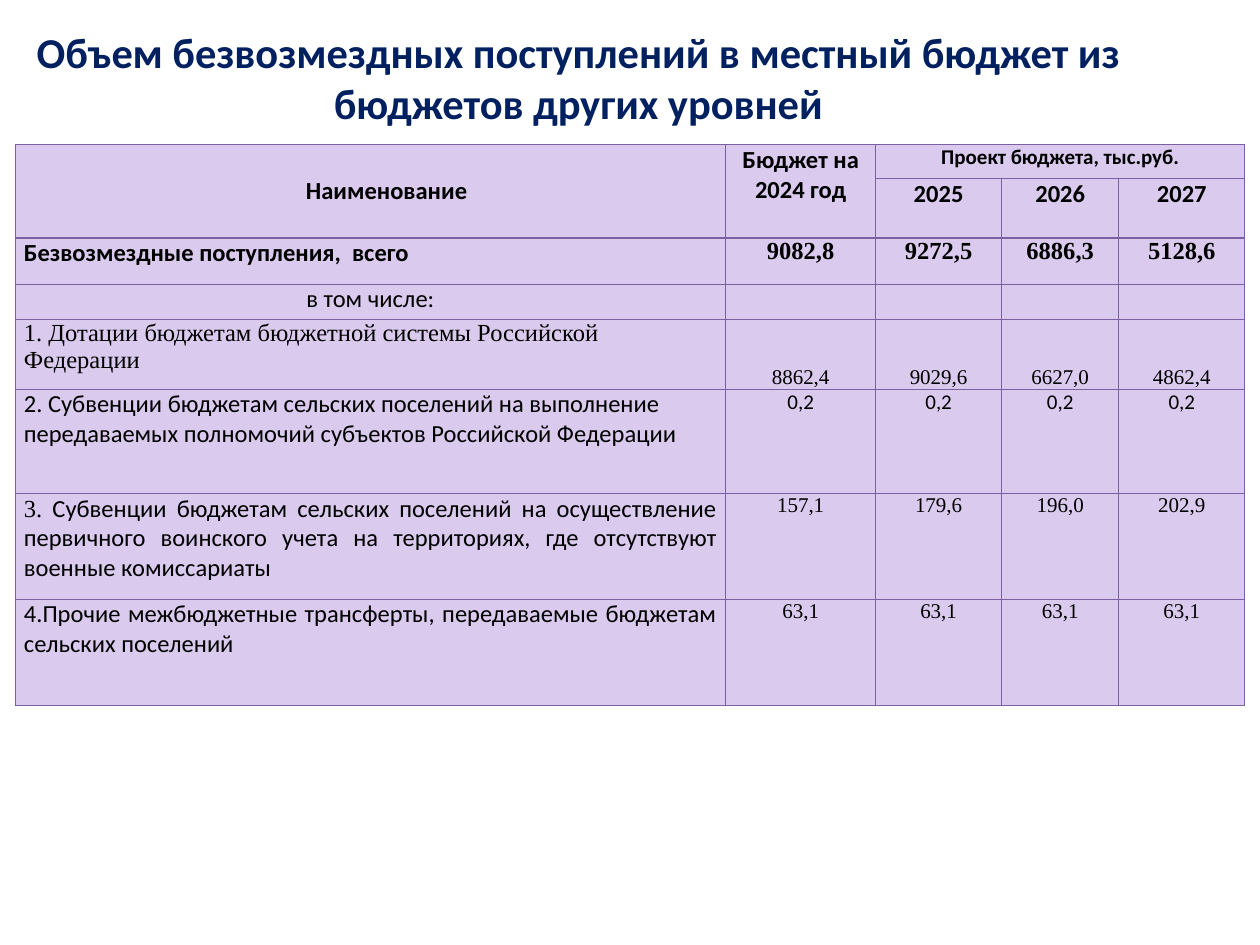
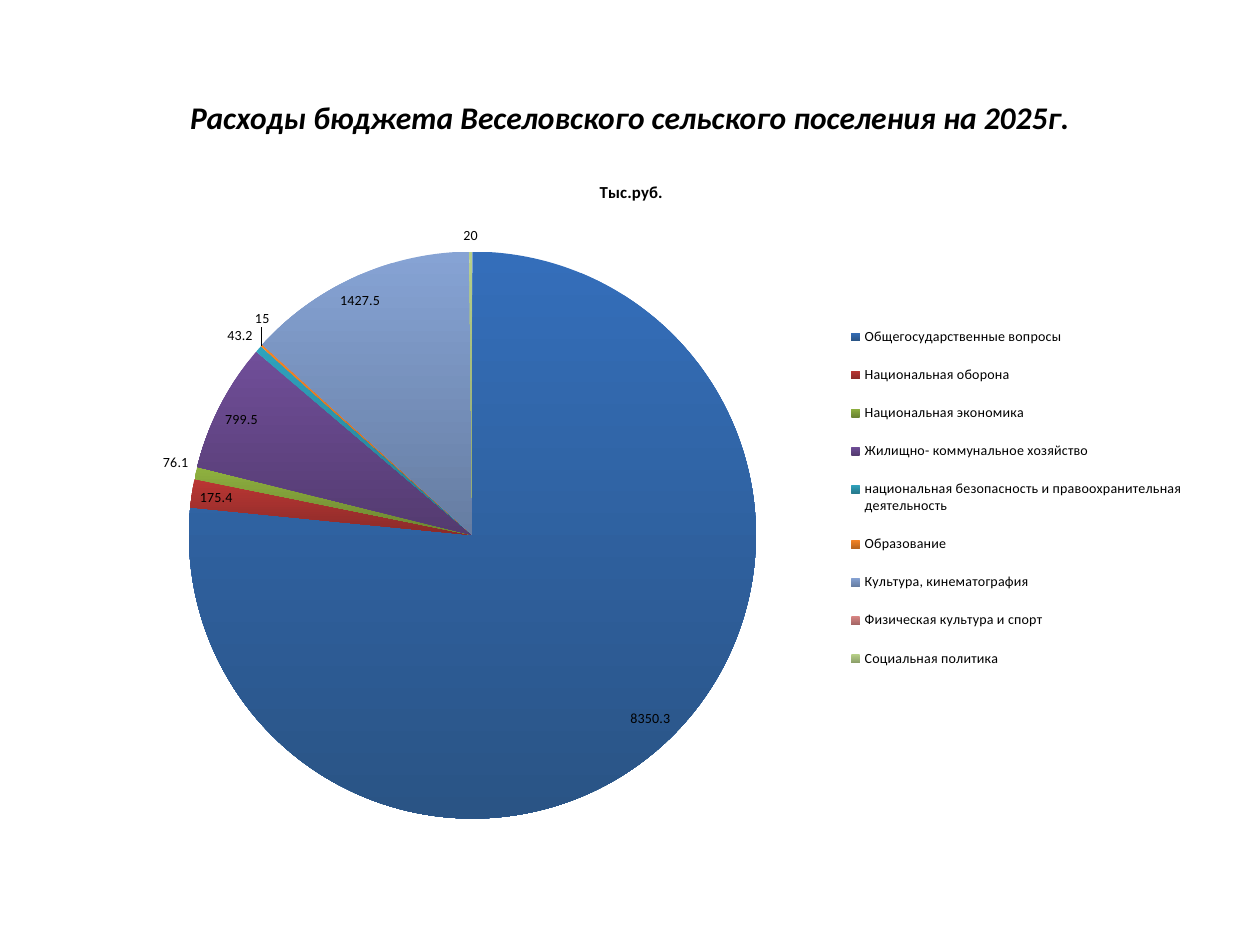
import pptx
import pptx.chart.data
import pptx.dml.color
import pptx.enum.chart
import pptx.enum.text
import pptx.oxml
import pptx.oxml.ns
import pptx.util
from pptx.util import Inches, Pt

COLORS = {"navy": "002060", "black": "000000", "lilac": "DACAED", "border": "7D60A0"}
BODY, SERIF = "Calibri", "Times New Roman"
ALIGN = pptx.enum.text.PP_ALIGN
ANCHOR = pptx.enum.text.MSO_ANCHOR


def set_font(font, size, name=BODY, bold=False, color="black"):
    font.size, font.name, font.bold = Pt(size), name, bold
    font.color.rgb = pptx.dml.color.RGBColor.from_string(COLORS[color])


def add_title(slide, text, left, top, height, size, color, anchor):
    box = slide.shapes.add_textbox(Inches(left), Inches(top), Inches(9), Inches(height))
    frame = box.text_frame
    frame.word_wrap = True
    frame.vertical_anchor = anchor
    frame.margin_top = frame.margin_bottom = 0
    title = frame.paragraphs[0]
    title.text = text
    title.alignment = ALIGN.CENTER
    set_font(title.font, size, bold=True, color=color)
    return title


prs = pptx.Presentation()
prs.slide_width, prs.slide_height = Inches(10), Inches(7.5)
blank = prs.slide_layouts[6]

# Slide 1: transfers from other budgets
transfers = prs.slides.add_slide(blank)
add_title(transfers, "Объем безвозмездных поступлений в местный бюджет из бюджетов других уровней",
          0.09, 0.21, 1.01, 24.3, "navy", ANCHOR.TOP)

col_widths = [5.64, 1.19, 1, 0.93, 1]
row_heights = [0.27, 0.47, 0.37, 0.28, 0.55, 0.83, 0.84, 0.84]
budget = transfers.shapes.add_table(
    len(row_heights), len(col_widths), Inches(0.12), Inches(1.15),
    Inches(sum(col_widths)), Inches(sum(row_heights))).table
for column, width in zip(budget.columns, col_widths):
    column.width = Inches(width)
for row, height in zip(budget.rows, row_heights):
    row.height = Inches(height)

header = (14, BODY, True)
total = (14, SERIF, True)
plain = (14, BODY, False)
amount = (12, SERIF, False)
# Each row: texts, alignment of the name, style of the name, style of the values
budget_rows = [
    (["Наименование ", "Бюджет на 2024 год", "Проект бюджета, тыс.руб.", "", ""],
     ALIGN.CENTER, header, header),
    (["", "", "2025", "2026", "2027"], ALIGN.CENTER, header, header),
    (["Безвозмездные поступления,  всего", "9082,8", "9272,5", "6886,3", "5128,6"],
     ALIGN.LEFT, header, total),
    (["в том числе:", "", "", "", ""], ALIGN.CENTER, plain, amount),
    (["1. Дотации бюджетам бюджетной системы Российской Федерации",
      "8862,4", "9029,6", "6627,0", "4862,4"], ALIGN.LEFT, (14, SERIF, False), amount),
    (["2. Субвенции бюджетам сельских поселений на выполнение передаваемых полномочий "
      "субъектов Российской Федерации", "0,2", "0,2", "0,2", "0,2"],
     ALIGN.LEFT, plain, (12, BODY, False)),
    (["3. Субвенции бюджетам сельских поселений на осуществление первичного воинского учета "
      "на территориях, где отсутствуют военные комиссариаты",
      "157,1", "179,6", "196,0", "202,9"], ALIGN.JUSTIFY, plain, amount),
    (["4.Прочие межбюджетные трансферты, передаваемые бюджетам сельских поселений",
      "63,1", "63,1", "63,1", "63,1"], ALIGN.JUSTIFY, plain, amount),
]
for r, (texts, name_align, name_style, value_style) in enumerate(budget_rows):
    for c, text in enumerate(texts):
        cell = budget.cell(r, c)
        cell.margin_left = cell.margin_right = Inches(0.07)
        cell.margin_top = cell.margin_bottom = 0
        cell.fill.solid()
        cell.fill.fore_color.rgb = pptx.dml.color.RGBColor.from_string(COLORS["lilac"])
        for i, side in enumerate(["lnL", "lnR", "lnT", "lnB"]):
            cell._tc.get_or_add_tcPr().insert(i, pptx.oxml.parse_xml(
                f'<a:{side} {pptx.oxml.ns.nsdecls("a")} w="9525"><a:solidFill>'
                f'<a:srgbClr val="{COLORS["border"]}"/></a:solidFill></a:{side}>'))
        paragraph = cell.text_frame.paragraphs[0]
        paragraph.text = text
        paragraph.alignment = ALIGN.CENTER if c else name_align
        set_font(paragraph.font, *(value_style if c else name_style))

for first, last in [((0, 0), (1, 0)), ((0, 1), (1, 1)), ((0, 2), (0, 4))]:
    budget.cell(*first).merge(budget.cell(*last))
name_header = budget.cell(0, 0)
name_header.vertical_anchor = ANCHOR.MIDDLE
name_header.text_frame.paragraphs[0]._p.get_or_add_pPr().set("indent", str(Inches(0.3)))
budget.cell(0, 2).text_frame.paragraphs[0].font.size = Pt(12)
for c in range(1, 5):
    budget.cell(4, c).vertical_anchor = ANCHOR.BOTTOM

military = budget.cell(6, 0).text_frame.paragraphs[0]
number, wording = military.runs[0].text[:2], military.runs[0].text[2:]
military.runs[0].text = number
military.runs[0].font.name = SERIF
military.add_run().text = wording

# Slide 2: expenses by section
expenses = prs.slides.add_slide(blank)
add_title(expenses, "Расходы бюджета Веселовского сельского поселения на 2025г.",
          0.5, 0.3, 1.25, 18, "black", ANCHOR.MIDDLE).font.italic = True

# Each section: name, amount, gradient from top to bottom
sections = [
    ("Общегосударственные вопросы", 8350.3, "346EBA", "2A5485"),
    ("Национальная оборона", 175.4, "BB3633", "8A2B29"),
    ("Национальная экономика", 76.1, "8FB13F", "6B8432"),
    ("Жилищно- коммунальное хозяйство", 799.5, "704E99", "543B70"),
    ("национальная безопасность и правоохранительная деятельность", 43.2, "2FA3BD", "277A8D"),
    ("Образование", 15, "F58426", "B9651F"),
    ("Культура, кинематография", 1427.5, "86A3D4", "667DA2"),
    ("Физическая культура и спорт", 0, "D98684", "A56766"),
    ("Социальная политика", 20, "B7D088", "8DA06A"),
]
chart_data = pptx.chart.data.CategoryChartData()
chart_data.categories = [section[0] for section in sections]
chart_data.add_series("Тыс.руб.", [section[1] for section in sections])
pie = expenses.shapes.add_chart(
    pptx.enum.chart.XL_CHART_TYPE.PIE,
    Inches(0.51), Inches(1.25), Inches(9), Inches(5.4), chart_data).chart
set_font(pie.font, 8)
pie.has_title = True
pie_title = pie.chart_title.text_frame.paragraphs[0]
pie_title.text = "Тыс.руб."
set_font(pie_title.font, 9.6, bold=True)
pie.has_legend = True
pie.legend.position = pptx.enum.chart.XL_LEGEND_POSITION.RIGHT
pie.legend.include_in_layout = False
set_font(pie.legend.font, 8)

slices = pie.plots[0].series[0]
for i, (_, _, top_color, bottom_color) in enumerate(sections):
    fill = slices.points[i].format.fill
    fill.gradient()
    fill.gradient_angle = 270
    for stop, color in zip(fill.gradient_stops, (top_color, bottom_color)):
        stop.color.rgb = pptx.dml.color.RGBColor.from_string(color)
labels = slices.data_labels
labels.show_value = True
labels.number_format = "General;;"
labels.number_format_is_linked = False
labels.position = pptx.enum.chart.XL_LABEL_POSITION.BEST_FIT
set_font(labels.font, 8)


def place(element, inner, **fractions):
    """Give a plot area or legend a fixed place, as fractions of the chart."""
    for old in element.findall(pptx.oxml.ns.qn("c:layout")):
        element.remove(old)
    target = '<c:layoutTarget val="inner"/>' if inner else ""
    sizes = "".join(f'<c:{key} val="{value}"/>' for key, value in fractions.items())
    layout = pptx.oxml.parse_xml(
        f'<c:layout {pptx.oxml.ns.nsdecls("c")}><c:manualLayout>{target}'
        f'<c:xMode val="edge"/><c:yMode val="edge"/>{sizes}</c:manualLayout></c:layout>')
    element.insert(0 if inner else 1, layout)


place(pie._chartSpace.chart.plotArea, True, x=0.11, y=0.135, w=0.5, h=0.84)
place(pie.legend._element, False, x=0.69, y=0.22, w=0.3, h=0.56)

prs.save("out.pptx")
